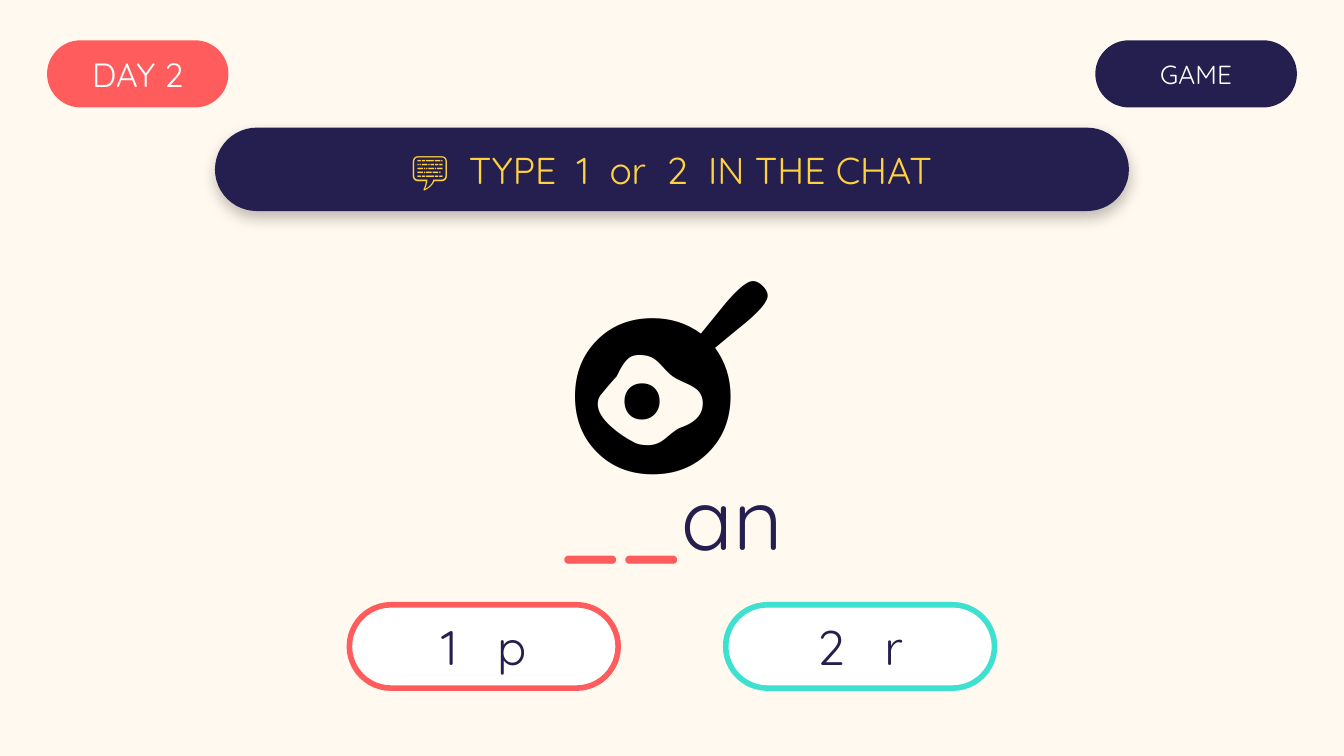
"""Build the Day 2 chat game slide."""
from dataclasses import dataclass

from lxml import etree
from pptx import Presentation
from pptx.dml.color import RGBColor
from pptx.enum.shapes import MSO_SHAPE
from pptx.enum.text import MSO_ANCHOR, MSO_AUTO_SIZE, PP_ALIGN
from pptx.oxml.ns import qn
from pptx.shapes.autoshape import Shape
from pptx.slide import Slide
from pptx.text.text import TextFrame, _Run
from pptx.util import Pt

ROUNDED = MSO_SHAPE.ROUNDED_RECTANGLE
TOP, MIDDLE = MSO_ANCHOR.TOP, MSO_ANCHOR.MIDDLE
CENTER = PP_ALIGN.CENTER
NO_AUTO_SIZE = MSO_AUTO_SIZE.NONE

EMU_PER_PX = 4572
SLIDE_WIDTH, SLIDE_HEIGHT = 2000, 1125
TITLE_ONLY = 5
FONT, PICTOGRAM_FONT = "Quicksand", "Calibri"
CREAM, NAVY, CORAL = "FFF9EF", "241F4E", "FF5D5D"
TEAL, YELLOW, WHITE, BLACK = "3EE0CF", "FFD23F", "FFFFFF", "000000"


@dataclass(frozen=True)
class Box:
    left: int
    top: int
    width: int
    height: int

    def emu(self) -> tuple[int, ...]:
        return tuple(value * EMU_PER_PX for value in (self.left, self.top, self.width, self.height))


@dataclass(frozen=True)
class Pill:
    box: Box
    fill: str
    text: str = ""
    size: int = 18
    text_color: str = WHITE
    outline: str | None = None


BANNER = Pill(Box(320, 190, 1360, 124), NAVY)
BADGES = (
    Pill(Box(70, 60, 270, 100), CORAL, "DAY 2", 18),
    Pill(Box(1630, 60, 300, 100), NAVY, "GAME", 14),
)
ANSWERS = tuple(
    Pill(Box(520 + 560 * index, 900, 400, 124), WHITE, text, 26, NAVY, outline)
    for index, (text, outline) in enumerate((("1   p", CORAL), ("2   r", TEAL)))
)


def color(value: str) -> RGBColor:
    return RGBColor.from_string(value)


def format_run(run: _Run, size: int, text_color: str, font: str = FONT, bold: bool = False) -> None:
    run.font.name = font
    run.font.size = Pt(size)
    run.font.bold = bold
    run.font.color.rgb = color(text_color)


def center_text(frame: TextFrame, text: str, size: int, text_color: str) -> None:
    frame.margin_left = frame.margin_top = frame.margin_right = frame.margin_bottom = 0
    frame.word_wrap = True
    frame.auto_size = NO_AUTO_SIZE
    frame.vertical_anchor = MIDDLE
    frame.text = text
    paragraph = frame.paragraphs[0]
    paragraph.alignment = CENTER
    format_run(paragraph.runs[0], size, text_color)


def draw_pill(slide: Slide, pill: Pill) -> Shape:
    shape = slide.shapes.add_shape(ROUNDED, *pill.box.emu())
    shape.adjustments[0] = 0.5
    shape.shadow.inherit = False
    shape.fill.solid()
    shape.fill.fore_color.rgb = color(pill.fill)
    if pill.outline:
        shape.line.color.rgb = color(pill.outline)
        shape.line.width = Pt(3)
    else:
        shape.line.fill.background()
    if pill.text:
        center_text(shape.text_frame, pill.text, pill.size, pill.text_color)
    return shape


def add_soft_shadow(shape: Shape) -> None:
    effects = shape._element.spPr.find(qn("a:effectLst"))
    shadow = etree.SubElement(
        effects, qn("a:outerShdw"), blurRad=str(Pt(8)), dist=str(Pt(3)),
        dir="5400000", algn="ctr", rotWithShape="0",
    )
    shadow_color = etree.SubElement(shadow, qn("a:srgbClr"), val=BLACK)
    etree.SubElement(shadow_color, qn("a:alpha"), val="25000")


def draw_banner(slide: Slide) -> None:
    add_soft_shadow(draw_pill(slide, BANNER))
    title = slide.shapes.title
    title.left, title.top, title.width, title.height = BANNER.box.emu()
    center_text(title.text_frame, "💬  TYPE  1  or  2  IN THE CHAT", 20, YELLOW)
    slide.shapes._spTree.append(title._element)


def add_centered_frame(slide: Slide, box: Box, anchor: MSO_ANCHOR) -> TextFrame:
    frame = slide.shapes.add_textbox(*box.emu()).text_frame
    frame.word_wrap = True
    frame.vertical_anchor = anchor
    frame.paragraphs[0].alignment = CENTER
    return frame


def draw_pictogram(slide: Slide) -> None:
    paragraph = add_centered_frame(slide, Box(0, 324, SLIDE_WIDTH, 350), TOP).paragraphs[0]
    paragraph.text = "🍳"
    format_run(paragraph.runs[0], 115, BLACK, PICTOGRAM_FONT)


def draw_word(slide: Slide) -> None:
    paragraph = add_centered_frame(slide, Box(0, 700, SLIDE_WIDTH, 136), MIDDLE).paragraphs[0]
    paragraph.text = "__"
    format_run(paragraph.runs[0], 46, CORAL, bold=True)
    ending = paragraph.add_run()
    ending.text = "an"
    format_run(ending, 46, NAVY)


def main() -> None:
    presentation = Presentation()
    presentation.slide_width = SLIDE_WIDTH * EMU_PER_PX
    presentation.slide_height = SLIDE_HEIGHT * EMU_PER_PX
    slide = presentation.slides.add_slide(presentation.slide_layouts[TITLE_ONLY])
    slide.background.fill.solid()
    slide.background.fill.fore_color.rgb = color(CREAM)
    for badge in BADGES:
        draw_pill(slide, badge)
    draw_banner(slide)
    draw_pictogram(slide)
    draw_word(slide)
    for answer in ANSWERS:
        draw_pill(slide, answer)
    presentation.save("out.pptx")


if __name__ == "__main__":
    main()
